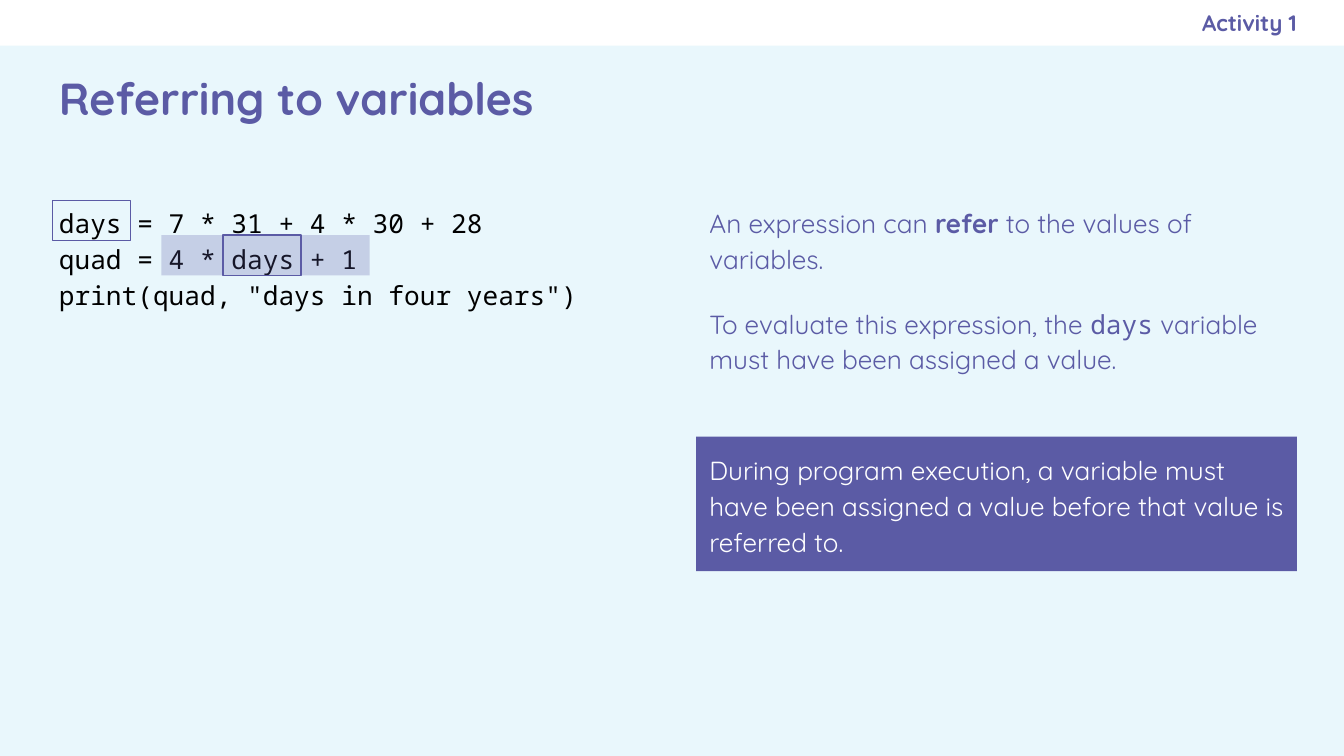
import pptx
import pptx.dml.color
import pptx.enum.shapes
import pptx.enum.text
import pptx.oxml
import pptx.oxml.ns
import pptx.util

Inches = pptx.util.Inches
Align = pptx.enum.text.PP_ALIGN
Anchor = pptx.enum.text.MSO_ANCHOR

COLORS = {"background": "E9F7FC", "white": "FFFFFF", "purple": "5B5BA5", "code": "000000"}
BODY_FONT = "Quicksand"
CODE_FONT = "Noto Sans Mono"
COLUMN_LEFT, COLUMN_WIDTH = 5.18, 4.47


def add_rectangle(page, left, top, width, height, fill=None, line=None):
    box = page.shapes.add_shape(
        pptx.enum.shapes.MSO_SHAPE.RECTANGLE,
        Inches(left), Inches(top), Inches(width), Inches(height))
    box.shadow.inherit = False
    if fill:
        box.fill.solid()
        box.fill.fore_color.rgb = pptx.dml.color.RGBColor.from_string(COLORS[fill])
    else:
        box.fill.background()
    if line:
        box.line.color.rgb = pptx.dml.color.RGBColor.from_string(COLORS[line])
        box.line.width = pptx.util.Pt(0.75)
    else:
        box.line.fill.background()
    return box


def write_text(box, text, size=14, color="purple", font=BODY_FONT, bold=False,
               align=Align.LEFT, anchor=Anchor.TOP, spacing=1.14, right_inset=0.06):
    """Write one paragraph per line; a line is a string or a list of (words, style)."""
    frame = box.text_frame
    frame.word_wrap = True
    frame.vertical_anchor = anchor
    frame.margin_left = frame.margin_top = frame.margin_bottom = Inches(0.1)
    frame.margin_right = Inches(right_inset)
    for number, line in enumerate(text if isinstance(text, list) else [text]):
        para = frame.paragraphs[0] if number == 0 else frame.add_paragraph()
        para.alignment = align
        para.line_spacing = spacing
        for words, style in [(line, {})] if isinstance(line, str) else line:
            span = para.add_run()
            span.text = words
            span.font.size = pptx.util.Pt(size)
            span.font.name = style.get("font", font)
            span.font.bold = style.get("bold", bold)
            span.font.color.rgb = pptx.dml.color.RGBColor.from_string(COLORS[color])


# Widescreen page, 16:9
deck = pptx.Presentation()
deck.slide_width = Inches(10)
deck.slide_height = Inches(10 * 9 / 16)
page = deck.slides.add_slide(deck.slide_layouts[6])
page.background.fill.solid()
page.background.fill.fore_color.rgb = pptx.dml.color.RGBColor.from_string(COLORS["background"])

# Header band
add_rectangle(page, 0, 0, 10, 0.34, fill="white")

# Text boxes: place, text and format
texts = [
    ((0.34, 1.41, 4.84, 1),
     ["days = 7 * 31 + 4 * 30 + 28",
      "quad = 4 * days + 1",
      'print(quad, "days in four years")'],
     dict(color="code", font=CODE_FONT, spacing=1.15, right_inset=0.1)),
    ((5.75, 0, 3.9, 0.34), "Activity 1",
     dict(size=12, bold=True, align=Align.RIGHT, anchor=Anchor.MIDDLE,
          spacing=1.0, right_inset=0)),
    ((0.34, 0.34, 9.32, 0.77), "Referring to variables",
     dict(size=24, bold=True, anchor=Anchor.MIDDLE, spacing=1.0, right_inset=0.1)),
    ((COLUMN_LEFT, 1.41, COLUMN_WIDTH, 0.7),
     [[("An expression can ", {}), ("refer", {"bold": True}),
       (" to the values of variables.", {})]], {}),
    ((COLUMN_LEFT, 2.16, COLUMN_WIDTH, 1),
     [[("To evaluate this expression, the ", {}), ("days", {"font": CODE_FONT}),
       (" variable must have been assigned a value.", {})]], {}),
]
for place, text, style in texts:
    box = page.shapes.add_textbox(*[Inches(length) for length in place])
    write_text(box, text, **style)

# Key rule
rule = add_rectangle(page, COLUMN_LEFT, 3.25, COLUMN_WIDTH, 1, fill="purple")
write_text(rule, "During program execution, a variable must have been assigned "
                 "a value before that value is referred to.", color="white")

# Translucent highlight over the expression
highlight = add_rectangle(page, 1.2, 1.75, 1.55, 0.3, fill="purple")
fill_color = highlight.element.spPr.find(".//" + pptx.oxml.ns.qn("a:srgbClr"))
alpha = pptx.oxml.parse_xml(
    '<a:alpha xmlns:a="http://schemas.openxmlformats.org/drawingml/2006/main" val="25000"/>')
fill_color.append(alpha)

# Frames around the variable name
for left, top in [(1.66, 1.75), (0.39, 1.49)]:
    add_rectangle(page, left, top, 0.58, 0.3, line="purple")

deck.save("out.pptx")
